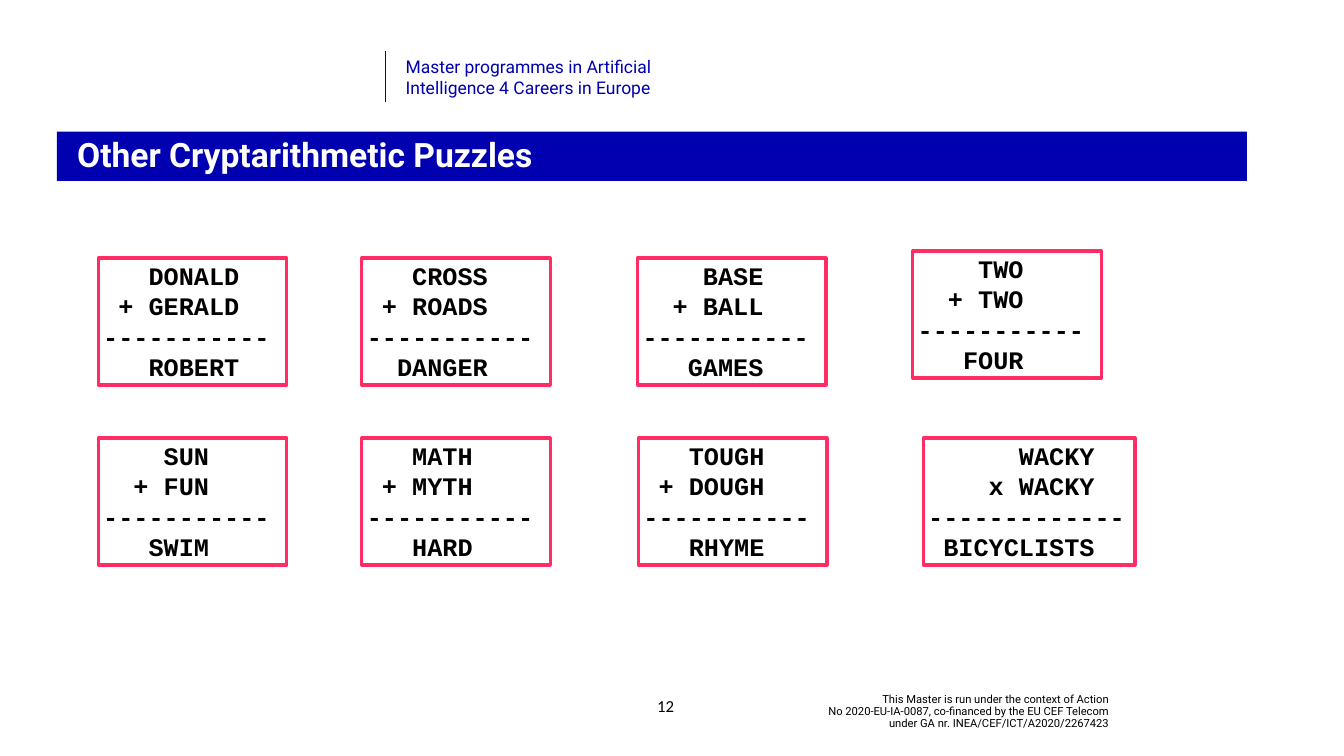
import pptx
import pptx.util
import pptx.dml.color
import pptx.enum.shapes
import pptx.enum.text
import lxml.etree

Pt = pptx.util.Pt
ALIGN = pptx.enum.text.PP_ALIGN
ANCHOR = pptx.enum.text.MSO_ANCHOR

# Content
TITLE = "Other Cryptarithmetic Puzzles"
PROGRAMME = "Master programmes in Artificial\vIntelligence 4 Careers in Europe"
FUNDING = ("This Master is run under the context of Action\v"
           "No 2020-EU-IA-0087, co-financed by the EU CEF Telecom\v"
           "under GA nr. INEA/CEF/ICT/A2020/2267423")
NUMBER = "12"

# Puzzles: left, top, dashes, column where the words end, words
ROW1, ROW2 = 368.6, 625.7
PUZZLES = [
    (140.4, ROW1, 11, 9, ("DONALD", "+ GERALD", "ROBERT")),
    (517, ROW1, 11, 8, ("CROSS", "+ ROADS", "DANGER")),
    (910.8, ROW1, 11, 8, ("BASE", "+ BALL", "GAMES")),
    (1303.9, 358.6, 11, 7, ("TWO", "+ TWO", "FOUR")),
    (140.4, ROW2, 11, 7, ("SUN", "+ FUN", "SWIM")),
    (517, ROW2, 11, 7, ("MATH", "+ MYTH", "HARD")),
    (912.2, ROW2, 11, 8, ("TOUGH", "+ DOUGH", "RHYME")),
    (1319, ROW2, 13, 11, ("WACKY", "x WACKY", "BICYCLISTS")),
]
BOX_WIDTH = {11: 269.3, 13: 302.4}
BOX_HEIGHT = 181.4
PUZZLE_SIZE = 36
CHAR_WIDTH = 0.6 * PUZZLE_SIZE  # monospaced advance

BLUE, PINK, BLACK, WHITE = "0000B0", "FF2D64", "000000", "FFFFFF"
NS = "http://schemas.openxmlformats.org/drawingml/2006/main"


def rgb(value):
    return pptx.dml.color.RGBColor.from_string(value)


def style(p, size, font, color, bold=False, align=ALIGN.LEFT, spacing=1.0):
    p.alignment = align
    p.line_spacing = spacing
    p.space_before = Pt(0)
    for f in [p.font] + [r.font for r in p.runs]:
        f.size, f.name, f.bold = Pt(size), font, bold
        f.color.rgb = rgb(color)


def add_text(s, box, text, anchor, *args, **kwargs):
    tf = s.shapes.add_textbox(*map(Pt, box)).text_frame
    tf.word_wrap = True
    tf.vertical_anchor = anchor
    tf.text = text
    style(tf.paragraphs[0], *args, **kwargs)


def add_right_tab(p, position):
    tabs = lxml.etree.SubElement(p._p.get_or_add_pPr(), f"{{{NS}}}tabLst")
    lxml.etree.SubElement(tabs, f"{{{NS}}}tab", pos=str(int(Pt(position))), algn="r")


def add_puzzle(s, left, top, dashes, end, words):
    sp = s.shapes.add_shape(pptx.enum.shapes.MSO_SHAPE.RECTANGLE, Pt(left), Pt(top),
                            Pt(BOX_WIDTH[dashes]), Pt(BOX_HEIGHT))
    sp.shadow.inherit = False
    sp.fill.background()
    sp.line.color.rgb = rgb(PINK)
    sp.line.width = Pt(4.5)
    tf = sp.text_frame
    tf.word_wrap = True
    tf.vertical_anchor = ANCHOR.TOP
    first, second, result = ("\t" + word for word in words)
    tf.text = "\n".join((first, second, "-" * dashes, result))
    for p in tf.paragraphs:
        if p.text.startswith("\t"):
            add_right_tab(p, end * CHAR_WIDTH)
        style(p, PUZZLE_SIZE, "Courier New", BLACK, bold=True)


def main():
    prs = pptx.Presentation()
    prs.slide_width, prs.slide_height = Pt(1920), Pt(1080)
    s = prs.slides.add_slide(prs.slide_layouts[5])

    # Title bar
    sp = s.shapes.title
    sp.left, sp.top, sp.width, sp.height = map(Pt, (81.4, 187.9, 1699.9, 70.6))
    sp.fill.solid()
    sp.fill.fore_color.rgb = rgb(BLUE)
    tf = sp.text_frame
    tf.text = TITLE
    tf.word_wrap = True
    tf.auto_size = pptx.enum.text.MSO_AUTO_SIZE.NONE
    tf.vertical_anchor = ANCHOR.MIDDLE
    tf.margin_left = Pt(28.8)
    style(tf.paragraphs[0], 48, "Roboto", WHITE, bold=True, spacing=0.9)

    # Header
    rule = s.shapes.add_connector(pptx.enum.shapes.MSO_CONNECTOR.STRAIGHT,
                                  Pt(550.8), Pt(72.7), Pt(550.8), Pt(146.2))
    rule.line.color.rgb = rgb(BLUE)
    rule.line.width = Pt(0.5)
    lxml.etree.SubElement(rule._element.spPr, f"{{{NS}}}effectLst")
    add_text(s, (572.4, 76.3, 458.6, 67.7), PROGRAMME, ANCHOR.TOP, 25, "Roboto", BLUE)

    # Puzzles
    for puzzle in PUZZLES:
        add_puzzle(s, *puzzle)

    # Footer
    add_text(s, (910.8, 979.9, 79.9, 57.6), NUMBER, ANCHOR.MIDDLE,
             24, "Calibri", BLACK, align=ALIGN.CENTER)
    add_text(s, (1081.4, 989.3, 509.8, 54.7), FUNDING, ANCHOR.MIDDLE,
             16, "Roboto", BLACK, align=ALIGN.RIGHT, spacing=0.9)

    prs.save("out.pptx")


if __name__ == "__main__":
    main()
